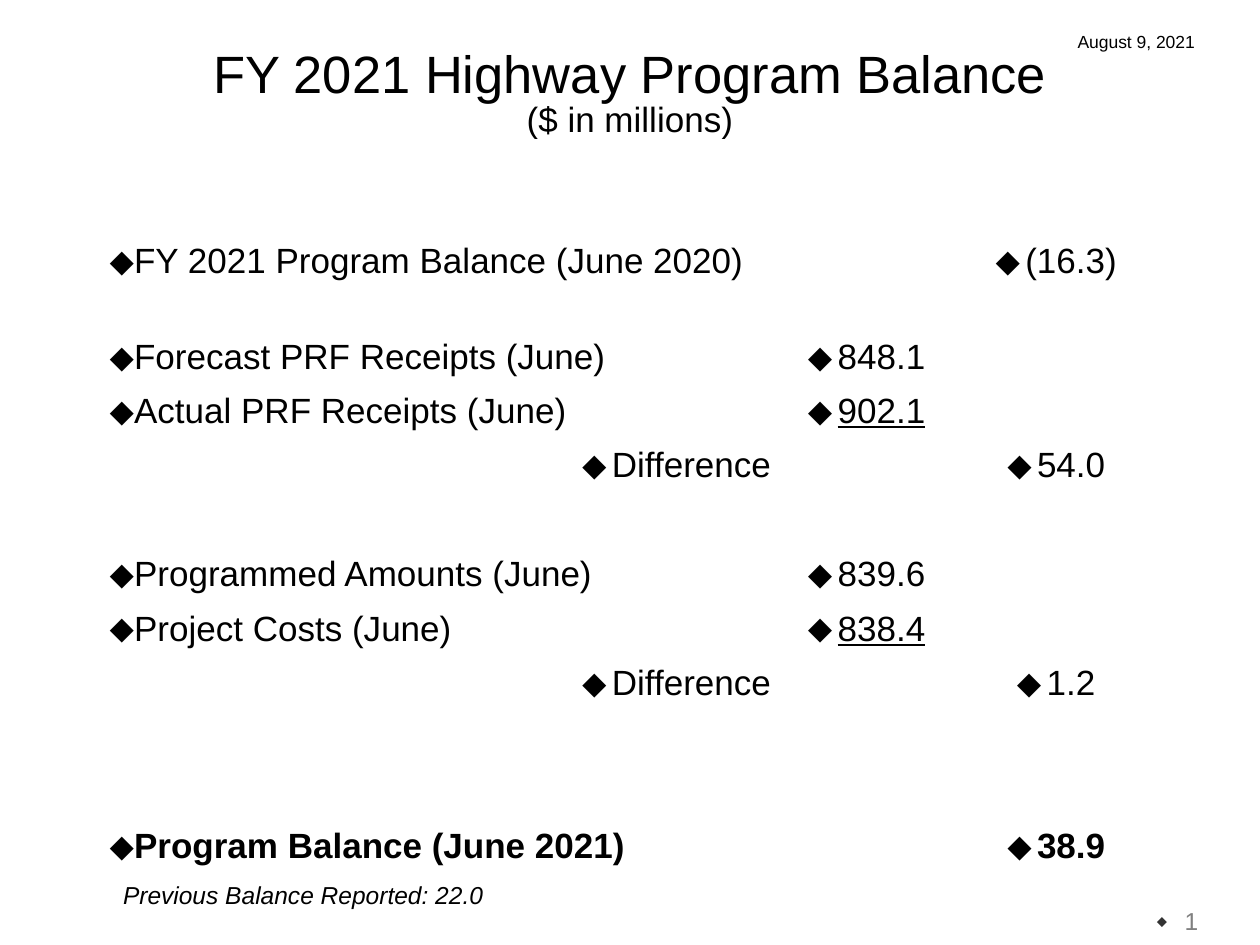
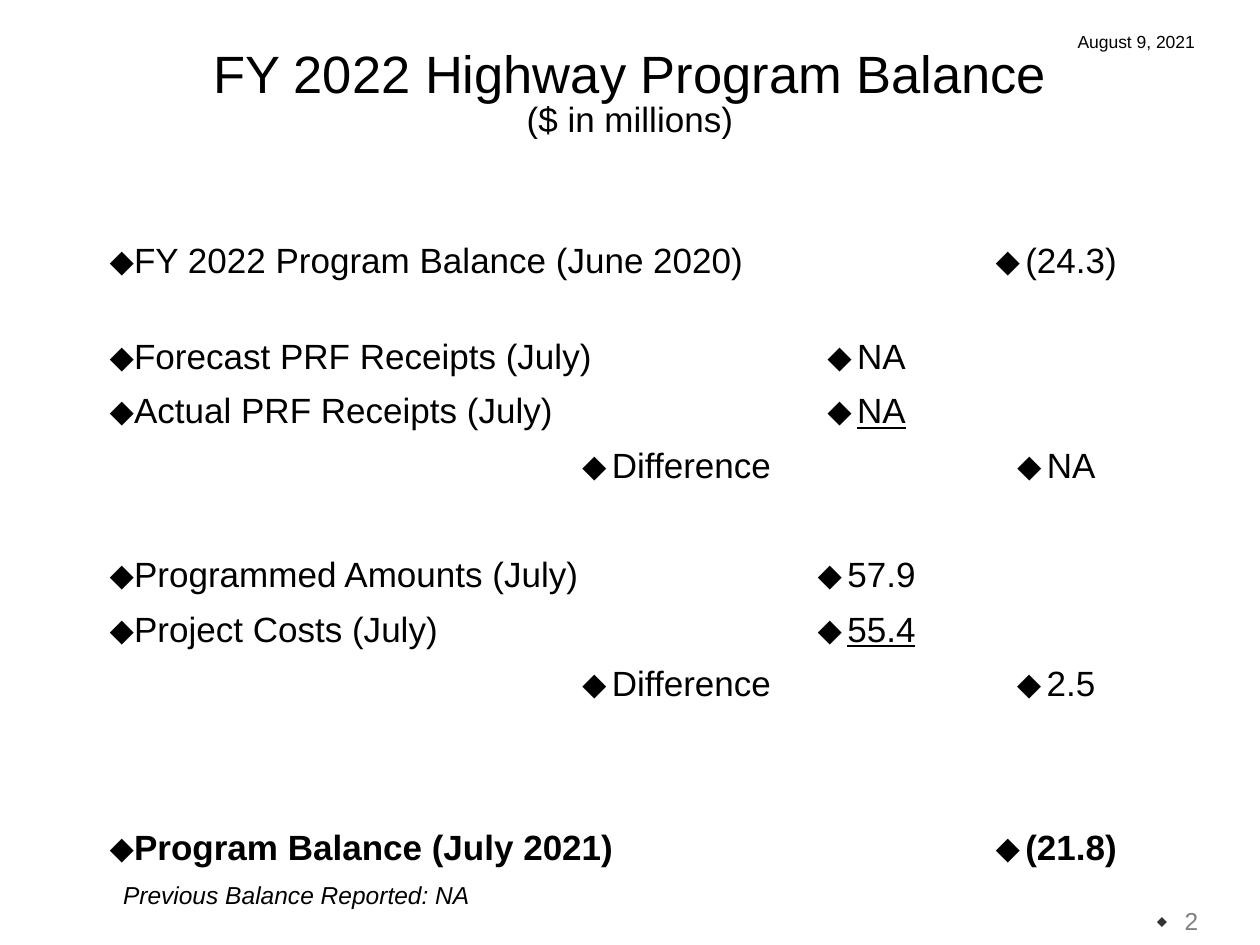
import pptx
import pptx.util
import pptx.dml.color
import pptx.enum.text
import pptx.oxml.ns
from lxml import etree

Pt = pptx.util.Pt
RGBColor = pptx.dml.color.RGBColor
ALIGN = pptx.enum.text.PP_ALIGN
ANCHOR = pptx.enum.text.MSO_ANCHOR
AUTO_SIZE = pptx.enum.text.MSO_AUTO_SIZE
qn = pptx.oxml.ns.qn

BLACK = RGBColor(0x00, 0x00, 0x00)
GRAY = RGBColor(0x80, 0x80, 0x80)
DARK_GRAY = RGBColor(0x33, 0x33, 0x33)

COL_WIDTHS = (392.4, 97.9, 118.8)
ROW_HEIGHTS = [54.7] * 2 + [31.08] * 10


class Deck:
    """Holds the shared style and the current slide."""

    font = "Arial"
    date = "August 9, 2021"

    def __init__(self):
        self.prs = pptx.Presentation()
        self.prs.slide_width, self.prs.slide_height = Pt(720), Pt(540)
        self.s = None

    def style(self, font, size, color=BLACK, bold=False, italic=False, underline=False):
        font.name, font.size = self.font, Pt(size)
        font.bold, font.italic, font.underline = bold, italic, underline
        font.color.rgb = color

    def bullet(self, p, color, percent, margin, indent):
        pPr = p._p.get_or_add_pPr()
        pPr.set("marL", str(Pt(margin)))
        pPr.set("indent", str(Pt(indent)))
        clr = etree.SubElement(pPr, qn("a:buClr"))
        etree.SubElement(clr, qn("a:srgbClr"), val=str(color))
        etree.SubElement(pPr, qn("a:buSzPct"), val=str(percent * 1000))
        etree.SubElement(pPr, qn("a:buFont"), typeface=self.font)
        etree.SubElement(pPr, qn("a:buChar"), char="⬥")

    def text(self, box, text, size, align=ALIGN.LEFT, anchor=ANCHOR.TOP,
             grow=False, **look):
        sp = self.s.shapes.add_textbox(*map(Pt, box))
        tf = sp.text_frame
        tf.word_wrap = True
        tf.auto_size = AUTO_SIZE.SHAPE_TO_FIT_TEXT if grow else AUTO_SIZE.NONE
        tf.vertical_anchor = anchor
        tf.text = text
        p = tf.paragraphs[0]
        p.alignment = align
        for r in p.runs:
            self.style(r.font, size, **look)
        return p

    def title(self, title, unit):
        # The vertical tab becomes a line break inside the paragraph
        p = self.text((0, 14.4, 720, 79.9), f"{title}\v{unit}", 30,
                      ALIGN.CENTER, ANCHOR.MIDDLE)
        p.line_spacing = 0.85
        p.runs[1].font.size = Pt(20)

    def slide_number(self):
        p = self.text((519.1, 502.3, 172.8, 36), str(len(self.prs.slides)), 14,
                      ALIGN.RIGHT, ANCHOR.BOTTOM, color=GRAY)
        self.bullet(p, DARK_GRAY, percent=60, margin=16, indent=-16)
        # Turn the run into a live slide number field
        r = p.runs[0]._r
        fld = etree.SubElement(p._p, qn("a:fld"), type="slidenum",
                               id="{B6F15528-21DE-4FAA-801E-634DDDAF4B2B}")
        fld.extend(list(r))
        p._p.remove(r)

    def cell(self, cell, text, align, **look):
        cell.text = text
        p = cell.text_frame.paragraphs[0]
        p.alignment = align
        self.bullet(p, BLACK, percent=100, margin=0, indent=-17)
        self.style(p.runs[0].font, 20, **look)

    def table(self, rows):
        frame = self.s.shapes.add_table(
            len(ROW_HEIGHTS), len(COL_WIDTHS), Pt(55.4), Pt(79.9),
            Pt(sum(COL_WIDTHS)), Pt(sum(ROW_HEIGHTS)))
        tbl = frame.table
        tbl.first_row = tbl.horz_banding = False
        for col, width in zip(tbl.columns, COL_WIDTHS):
            col.width = Pt(width)
        for row, height in zip(tbl.rows, ROW_HEIGHTS):
            row.height = Pt(height)
        for c in tbl.iter_cells():
            c.fill.background()
        for i, (label, column, value, look) in rows.items():
            align = ALIGN.RIGHT if label == "Difference" else ALIGN.LEFT
            self.cell(tbl.cell(i, 0), label, align, bold=look == "bold")
            self.cell(tbl.cell(i, column), value, ALIGN.CENTER,
                      bold=look == "bold", underline=look == "underline")

    def balance_slide(self, year, month, opening, receipts, costs, closing, previous):
        self.s = self.prs.slides.add_slide(self.prs.slide_layouts[6])
        self.title(f"FY {year} Highway Program Balance", "($ in millions)")

        # Row index: label, value column, value, look
        rows = {1: (f"FY {year} Program Balance (June 2020)", 2, opening, "")}
        groups = (
            (2, "Forecast PRF Receipts", "Actual PRF Receipts", receipts),
            (6, "Programmed Amounts", "Project Costs", costs),
        )
        for top, first, second, values in groups:
            rows[top] = (f"{first} ({month})", 1, values[0], "")
            rows[top + 1] = (f"{second} ({month})", 1, values[1], "underline")
            rows[top + 2] = ("Difference", 2, values[2], "")
        rows[11] = (f"Program Balance ({month} 2021)", 2, closing, "bold")
        self.table(rows)

        # Footnote, slide number and date
        self.text((63.2, 499.5, 311, 24.5), f"Previous Balance Reported: {previous}",
                  14, grow=True, italic=True)
        self.slide_number()
        self.text((592, 14.4, 114.5, 19.4), self.date, 10, ALIGN.CENTER, grow=True)


def main():
    deck = Deck()
    deck.balance_slide(2021, "June", "(16.3)", ("848.1", "902.1", "54.0"),
                       ("839.6", "838.4", "1.2"), "38.9", "22.0")
    deck.balance_slide(2022, "July", "(24.3)", ("NA", "NA", "NA"),
                       ("57.9", "55.4", "2.5"), "(21.8)", "NA")
    deck.prs.save("out.pptx")


if __name__ == "__main__":
    main()
